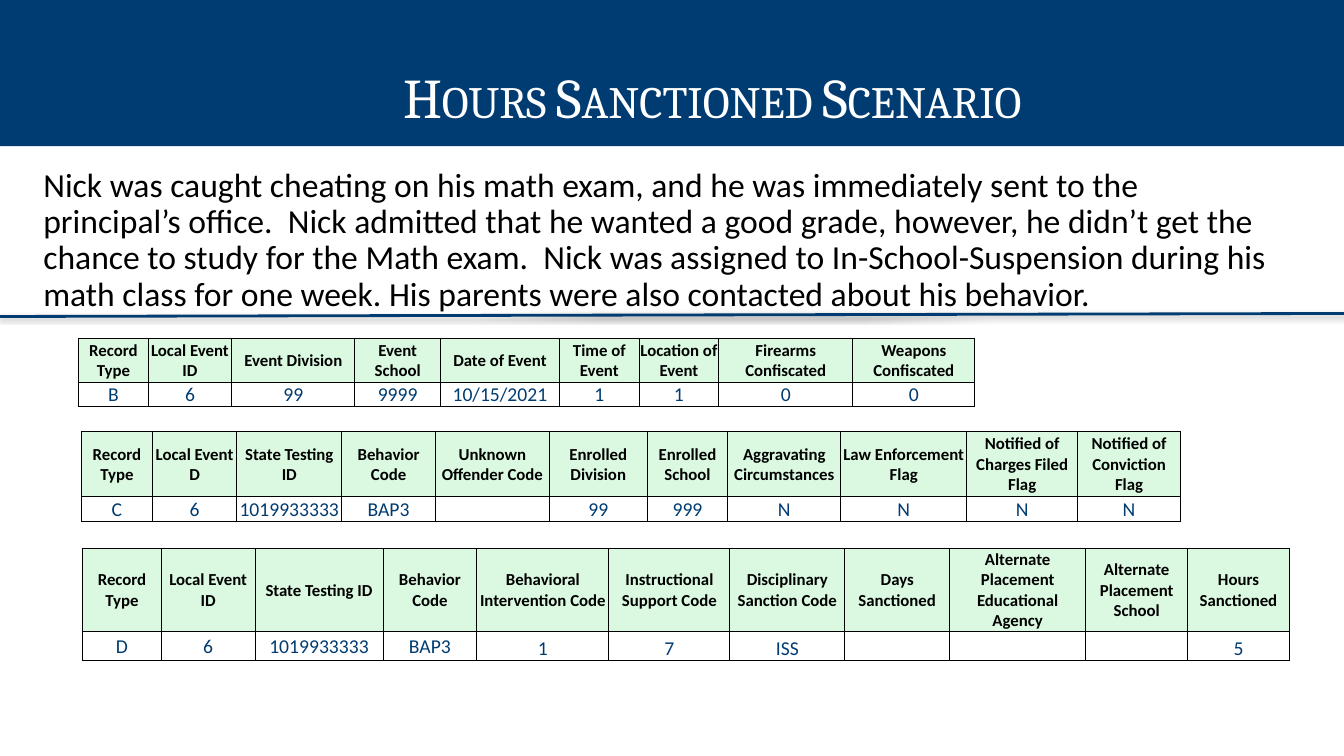
from dataclasses import dataclass

from lxml import etree
from pptx import Presentation
from pptx import util as u
from pptx.dml.color import RGBColor
from pptx.enum import shapes, text
from pptx.oxml.ns import qn


@dataclass(frozen=True)
class Theme:
    navy: str = "003C71"
    mint: str = "DAF9E0"
    white: str = "FFFFFF"
    black: str = "000000"
    heading_font: str = "Cambria"
    text_font: str = "Calibri"
    title_size: int = 40
    story_size: int = 24
    header_size: int = 12
    value_size: int = 14
    rule_width: int = 2
    border_width: float = 0.75


@dataclass(frozen=True)
class Box:
    left: int
    top: int
    width: int
    height: int


THEME = Theme()
COLUMNS, ROWS = 1333, 750

STORY = (
    "Nick was caught cheating on his math exam, and he was immediately sent to the "
    "principal’s office.  Nick admitted that he wanted a good grade, however, he didn’t "
    "get the chance to study for the Math exam.  Nick was assigned to "
    "In-School-Suspension during his math class for one week. His parents were also "
    "contacted about his behavior."
)

EVENT_RECORD = [
    ("Record Type", "B", 69), ("Local Event ID", "6", 83),
    ("Event Division", "99", 122), ("Event School", "9999", 85),
    ("Date of Event", "10/15/2021", 118), ("Time of Event", "1", 79),
    ("Location of Event", "1", 79), ("Firearms Confiscated", "0", 133),
    ("Weapons Confiscated", "0", 121),
]
OFFENDER_RECORD = [
    ("Record Type", "C", 70), ("Local Event D", "6", 84),
    ("State Testing ID", "1019933333", 104), ("Behavior Code", "BAP3", 93),
    ("Unknown Offender Code", "", 113), ("Enrolled Division", "99", 97),
    ("Enrolled School", "999", 80), ("Aggravating Circumstances", "N", 112),
    ("Law Enforcement Flag", "N", 125), ("Notified of Charges Filed Flag", "N", 110),
    ("Notified of Conviction Flag", "N", 102),
]
SANCTION_RECORD = [
    ("Record Type", "D", 78), ("Local Event ID", "6", 93),
    ("State Testing ID", "1019933333", 127), ("Behavior Code", "BAP3", 93),
    ("Behavioral Intervention Code", "1", 131), ("Instructional Support Code", "7", 120),
    ("Disciplinary Sanction Code", "ISS", 114), ("Days Sanctioned", "", 104),
    ("Alternate Placement Educational Agency", "", 135),
    ("Alternate Placement School", "", 101), ("Hours Sanctioned", "5", 101),
]


def grid(count):
    return u.Inches(count / 100)


def place(shape, box):
    shape.left, shape.top = grid(box.left), grid(box.top)
    shape.width, shape.height = grid(box.width), grid(box.height)


def set_margins(target, left, top, right, bottom):
    target.margin_left, target.margin_top = grid(left), grid(top)
    target.margin_right, target.margin_bottom = grid(right), grid(bottom)


def write(para, words, font, size, color, align, bold=False):
    para.alignment = align
    span = para.add_run()
    span.text = words
    span.font.name = font
    span.font.size = u.Pt(size)
    span.font.bold = bold
    span.font.color.rgb = RGBColor.from_string(color)
    return span


def fill_placeholder(shape, box, margins):
    place(shape, box)
    frame = shape.text_frame
    frame.word_wrap = True
    frame.auto_size = text.MSO_AUTO_SIZE.NONE
    frame.vertical_anchor = text.MSO_ANCHOR.TOP
    set_margins(frame, *margins)
    para = frame.paragraphs[0]
    para.line_spacing = 0.9
    para.space_before = u.Pt(0)
    return para


def title_band(page, box):
    title = page.shapes.title
    para = fill_placeholder(title, box, (90, 70, 10, 5))
    title.fill.solid()
    title.fill.fore_color.rgb = RGBColor.from_string(THEME.navy)
    span = write(para, "Hours Sanctioned Scenario", THEME.heading_font,
                 THEME.title_size, THEME.white, text.PP_ALIGN.CENTER)
    span.font._element.set("cap", "small")


def story(page, box):
    para = fill_placeholder(page.placeholders[1], box, (13, 33, 13, 7))
    write(para, STORY, THEME.text_font, THEME.story_size, THEME.black,
          text.PP_ALIGN.LEFT)
    properties = para._p.get_or_add_pPr()
    properties.set("marL", "0")
    properties.set("indent", "0")
    etree.SubElement(properties, qn("a:buNone"))


def divider(page, box):
    rule = page.shapes.add_connector(
        shapes.MSO_CONNECTOR.STRAIGHT, grid(box.left), grid(box.top + box.height),
        grid(box.left + box.width), grid(box.top))
    rule.line.color.rgb = RGBColor.from_string(THEME.navy)
    rule.line.width = u.Pt(THEME.rule_width)
    effects = etree.SubElement(rule._element.spPr, qn("a:effectLst"))
    shadow = etree.SubElement(
        effects, qn("a:outerShdw"), blurRad=str(u.Pt(3.1)), dist=str(u.Pt(1.6)),
        dir="5400000", rotWithShape="0")
    shade = etree.SubElement(shadow, qn("a:srgbClr"), val=THEME.black)
    etree.SubElement(shade, qn("a:alpha"), val="38000")


def add_borders(cell):
    properties = cell._tc.get_or_add_tcPr()
    for index, side in enumerate(("a:lnL", "a:lnR", "a:lnT", "a:lnB")):
        line = etree.Element(qn(side), w=str(u.Pt(THEME.border_width)))
        paint = etree.SubElement(line, qn("a:solidFill"))
        etree.SubElement(paint, qn("a:srgbClr"), val=THEME.black)
        properties.insert(index, line)


def record_cell(cell, words, is_header, anchor):
    if is_header:
        cell.fill.solid()
        cell.fill.fore_color.rgb = RGBColor.from_string(THEME.mint)
        size, color = THEME.header_size, THEME.black
    else:
        cell.fill.background()
        size, color = THEME.value_size, THEME.navy
    add_borders(cell)
    set_margins(cell, 1, 1, 1, 0)
    cell.vertical_anchor = anchor
    para = cell.text_frame.paragraphs[0]
    if words:
        write(para, words, THEME.text_font, size, color,
              text.PP_ALIGN.CENTER, is_header)
    else:
        etree.SubElement(para._p, qn("a:endParaRPr"), sz=str(size * 100))


def record_table(page, box, fields, value_height, bottom_from=None):
    table = page.shapes.add_table(
        2, len(fields), grid(box.left), grid(box.top),
        grid(box.width), grid(box.height)).table
    table.first_row = table.horz_banding = False
    table.rows[0].height = grid(box.height - value_height)
    table.rows[1].height = grid(value_height)
    for index, (header, value, width) in enumerate(fields):
        table.columns[index].width = grid(width)
        low = bottom_from is not None and index >= bottom_from
        value_anchor = text.MSO_ANCHOR.BOTTOM if low else text.MSO_ANCHOR.MIDDLE
        record_cell(table.cell(0, index), header, True, text.MSO_ANCHOR.MIDDLE)
        record_cell(table.cell(1, index), value, False, value_anchor)


def main():
    deck = Presentation()
    deck.slide_width, deck.slide_height = grid(COLUMNS), grid(ROWS)
    page = deck.slides.add_slide(deck.slide_layouts[1])
    story(page, Box(30, 134, 1250, 567))
    title_band(page, Box(0, 0, COLUMNS, 145))
    divider(page, Box(0, 311, COLUMNS, 3))
    record_table(page, Box(81, 428, 1088, 89), OFFENDER_RECORD, 24)
    record_table(page, Box(78, 336, 890, 67), EVENT_RECORD, 24)
    record_table(page, Box(82, 544, 1196, 111), SANCTION_RECORD, 29, bottom_from=4)
    deck.save("out.pptx")


if __name__ == "__main__":
    main()
